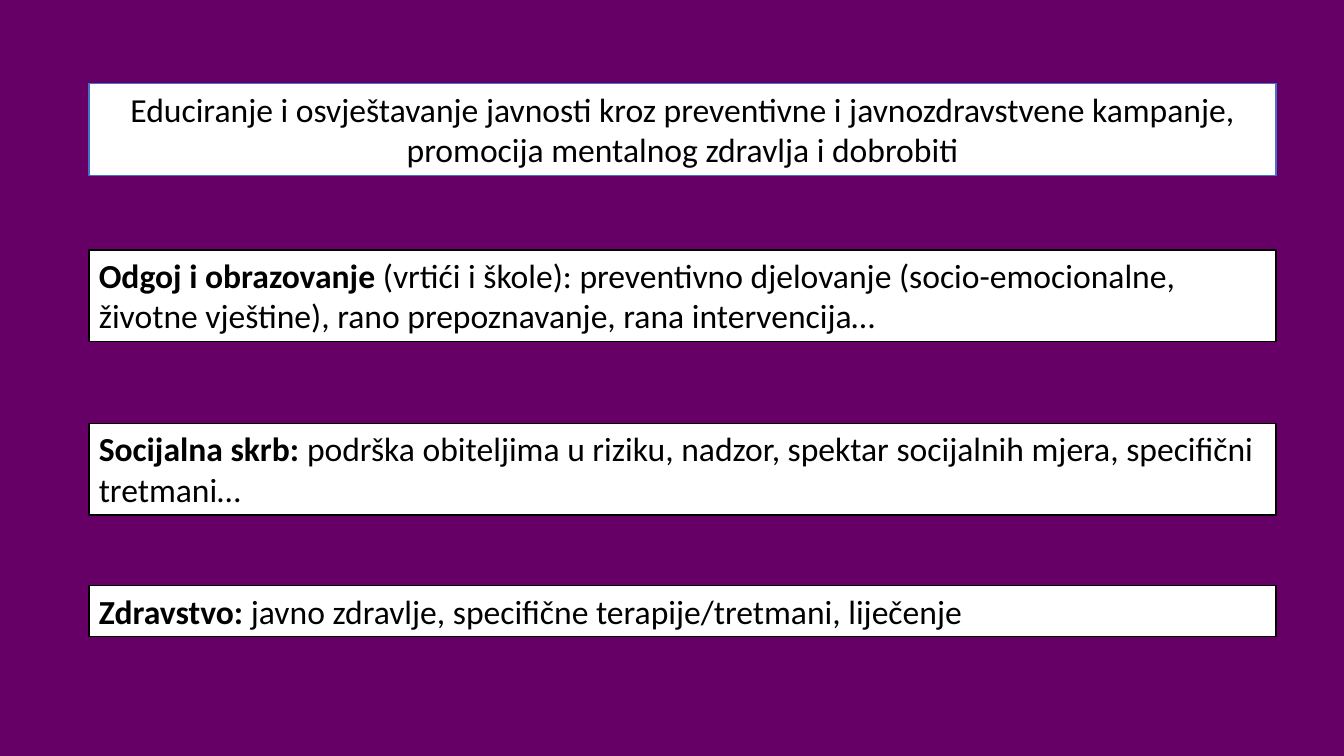
import dataclasses

import pptx
import pptx.dml.color
import pptx.enum.text
import pptx.util

Cm = pptx.util.Cm
Align = pptx.enum.text.PP_ALIGN

HEADLINE = ("Educiranje i osvještavanje javnosti kroz preventivne i javnozdravstvene "
            "kampanje, promocija mentalnog zdravlja i dobrobiti")

# Sector, its measures, top in cm, lines of text
SECTORS = [
    ("Odgoj i obrazovanje ",
     "(vrtići i škole): preventivno djelovanje (socio-emocionalne, životne vještine), "
     "rano prepoznavanje, rana intervencija…", 6.3, 2),
    ("Socijalna skrb: ",
     "podrška obiteljima u riziku, nadzor, spektar socijalnih mjera, "
     "specifični tretmani…", 10.67, 2),
    ("Zdravstvo: ",
     "javno zdravlje, specifične terapije/tretmani, liječenje", 14.76, 1),
]

LEFT, WIDTH = 2.24, 29.92
HEADLINE_TOP = 2.11
LINE_HEIGHT, PADDING = 1.03, 0.25


@dataclasses.dataclass(frozen=True)
class Theme:
    background: str = "660066"
    panel: str = "FFFFFF"
    text: str = "000000"
    accent: str = "4472C4"
    font: str = "Calibri"
    size: int = 24
    border: int = 1


THEME = Theme()


def color(code):
    return pptx.dml.color.RGBColor.from_string(code)


def fill_panel(box, top, lines, border, alignment, runs):
    """Place and style a box, then write its (text, bold) runs."""
    box.left, box.top, box.width = Cm(LEFT), Cm(top), Cm(WIDTH)
    box.height = Cm(lines * LINE_HEIGHT + PADDING)
    box.fill.solid()
    box.fill.fore_color.rgb = color(THEME.panel)
    box.line.color.rgb = color(border)
    box.line.width = pptx.util.Pt(THEME.border)

    frame = box.text_frame
    frame.word_wrap = True
    frame.auto_size = pptx.enum.text.MSO_AUTO_SIZE.SHAPE_TO_FIT_TEXT
    frame.vertical_anchor = pptx.enum.text.MSO_ANCHOR.TOP
    para = frame.paragraphs[0]
    para.alignment = alignment
    for text, bold in runs:
        span = para.add_run()
        span.text = text
        span.font.name = THEME.font
        span.font.size = pptx.util.Pt(THEME.size)
        span.font.bold = bold
        span.font.color.rgb = color(THEME.text)


def main():
    deck = pptx.Presentation()
    deck.slide_width, deck.slide_height = Cm(33.87), Cm(19.05)
    page = deck.slides.add_slide(deck.slide_layouts.get_by_name("Title Only"))
    page.background.fill.solid()
    page.background.fill.fore_color.rgb = color(THEME.background)

    fill_panel(page.shapes.title, HEADLINE_TOP, 2, THEME.accent, Align.CENTER,
               [(HEADLINE, False)])
    for sector, measures, top, lines in SECTORS:
        box = page.shapes.add_textbox(0, 0, 0, 0)
        fill_panel(box, top, lines, THEME.text, Align.LEFT,
                   [(sector, True), (measures, False)])

    deck.save("out.pptx")


if __name__ == "__main__":
    main()
